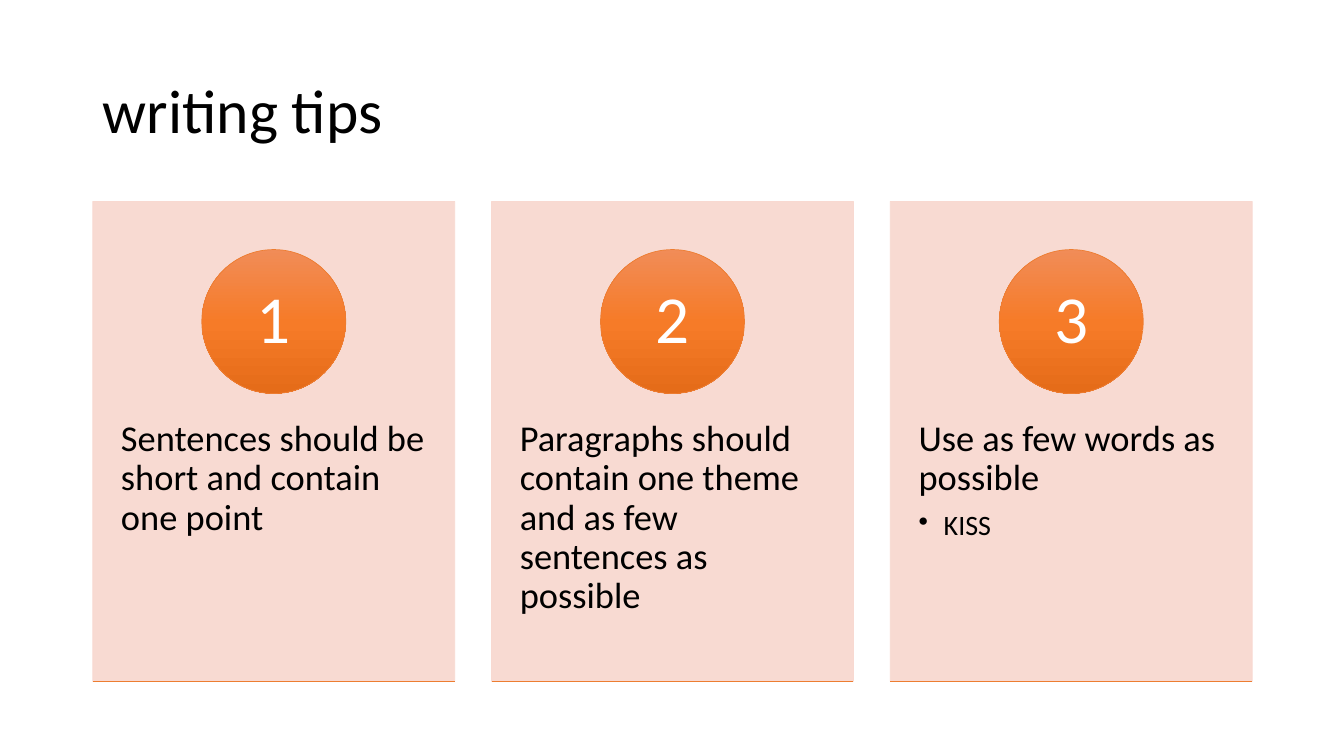
from copy import deepcopy
from dataclasses import dataclass

from lxml.etree import SubElement
from pptx import Presentation
from pptx.dml.color import RGBColor
from pptx.enum.shapes import MSO_CONNECTOR as LINE, MSO_SHAPE as SHAPE
from pptx.enum.text import MSO_ANCHOR as ANCHOR, PP_ALIGN as ALIGN
from pptx.oxml.ns import qn
from pptx.util import Inches, Pt

# Content: one (statement, bullets) pair per card
TITLE = "writing tips"
TIPS = [
    ("Sentences should be short and contain one point", []),
    ("Paragraphs should contain one theme and as few sentences as possible", []),
    ("Use as few words as possible", ["KISS"]),
]


@dataclass(frozen=True)
class Theme:
    font: str = "Calibri"
    text: str = "000000"
    on_accent: str = "FFFFFF"
    card: str = "F8D7CE"
    card_alpha: int = 90
    accent: str = "ED7D31"
    gradient: tuple = ("F18C57", "F67B28", "E56C19")
    title_size: int = 44
    number_size: int = 48
    tip_size: int = 26
    bullet_size: int = 20
    line_width: float = 0.5


T = Theme()

# Grid, in inches
SLIDE_W, SLIDE_H = 13.33, 7.5
MARGIN, CONTENT_W = 0.92, 11.5
TITLE_TOP, TITLE_H = 0.4, 1.45
CARD_W, CARD_TOP, CARD_H = 3.59, 2, 4.76
PITCH = (CONTENT_W - CARD_W) / (len(TIPS) - 1)
CIRCLE = 0.3 * CARD_H
CIRCLE_TOP = CARD_TOP + 0.1 * CARD_H
TIP_TOP, TIP_H = CARD_TOP + 0.38 * CARD_H, 0.6 * CARD_H


def box(*lengths):
    return [Inches(v) for v in lengths]


def set_frame(tf, x_inset, y_inset, anchor):
    tf.word_wrap = True
    tf.margin_left = tf.margin_right = Inches(x_inset)
    tf.margin_top = tf.margin_bottom = Inches(y_inset)
    tf.vertical_anchor = anchor


def write(p, text, size, color=T.text, align=ALIGN.LEFT, after=0.0, bullet=False):
    """Fill a paragraph; after is a share of the type size."""
    p.alignment = align
    p.line_spacing = 0.9
    p.space_before, p.space_after = Pt(0), Pt(round(size * after))
    r = p.add_run()
    r.text = text
    r.font.name, r.font.size = T.font, Pt(size)
    r.font.color.rgb = RGBColor.from_string(color)
    if bullet:
        p.level = 1
        pPr = p._p.get_or_add_pPr()
        pPr.set("marL", str(Inches(0.25)))
        pPr.set("indent", str(Inches(-0.25)))
        SubElement(pPr, qn("a:buChar")).set("char", "•")


def set_line(line, color):
    line.color.rgb = RGBColor.from_string(color)
    line.width = Pt(T.line_width)


def set_alpha(sp, percent):
    for clr in sp._element.spPr.iter(qn("a:srgbClr")):
        SubElement(clr, qn("a:alpha")).set("val", str(percent * 1000))


def set_gradient(fill):
    fill.gradient()
    fill.gradient_angle = 270
    first = fill.gradient_stops[0]._gs
    first.addnext(deepcopy(first))
    for i, (stop, color) in enumerate(zip(fill.gradient_stops, T.gradient)):
        stop.position = i / (len(T.gradient) - 1)
        stop.color.rgb = RGBColor.from_string(color)


def add_card(shapes, left, number, tip, bullets):
    # Panel
    sp = shapes.add_shape(SHAPE.RECTANGLE, *box(left, CARD_TOP, CARD_W, CARD_H))
    sp.shadow.inherit = False
    sp.fill.solid()
    sp.fill.fore_color.rgb = RGBColor.from_string(T.card)
    set_line(sp.line, T.card)
    set_alpha(sp, T.card_alpha)

    # Tip and its bullets
    tf = shapes.add_textbox(*box(left, TIP_TOP, CARD_W, TIP_H)).text_frame
    set_frame(tf, 0.28, 0.36, ANCHOR.TOP)
    write(tf.paragraphs[0], tip, T.tip_size, after=0.35)
    for text in bullets:
        write(tf.add_paragraph(), text, T.bullet_size, after=0.15, bullet=True)

    # Numbered circle
    circle_left = left + (CARD_W - CIRCLE) / 2
    sp = shapes.add_shape(SHAPE.OVAL, *box(circle_left, CIRCLE_TOP, CIRCLE, CIRCLE))
    sp.shadow.inherit = False
    set_gradient(sp.fill)
    set_line(sp.line, T.accent)
    set_frame(sp.text_frame, 0.11, 0.01, ANCHOR.MIDDLE)
    write(sp.text_frame.paragraphs[0], str(number), T.number_size,
          color=T.on_accent, align=ALIGN.CENTER)

    # Base line
    bottom = CARD_TOP + CARD_H
    base = shapes.add_connector(LINE.STRAIGHT, *box(left, bottom, left + CARD_W, bottom))
    set_line(base.line, T.accent)
    SubElement(base._element.spPr, qn("a:effectLst"))


def main():
    prs = Presentation()
    prs.slide_width, prs.slide_height = box(SLIDE_W, SLIDE_H)
    s = prs.slides.add_slide(prs.slide_layouts[5])

    # Title
    title = s.shapes.title
    title.left, title.top, title.width, title.height = box(
        MARGIN, TITLE_TOP, CONTENT_W, TITLE_H)
    set_frame(title.text_frame, 0.1, 0.05, ANCHOR.MIDDLE)
    write(title.text_frame.paragraphs[0], TITLE, T.title_size)

    # Cards
    for i, (tip, bullets) in enumerate(TIPS):
        add_card(s.shapes, MARGIN + i * PITCH, i + 1, tip, bullets)

    prs.save("out.pptx")


if __name__ == "__main__":
    main()
